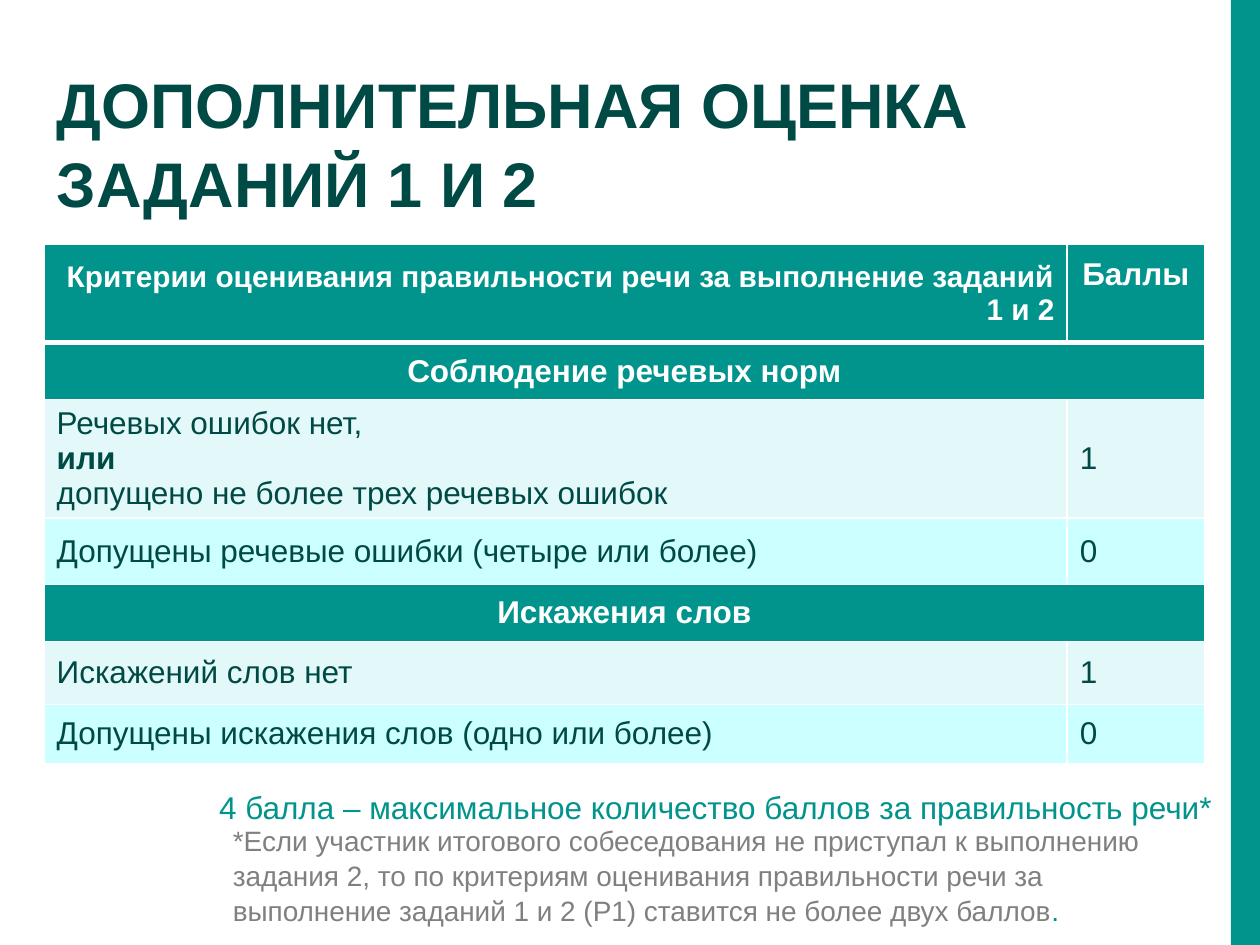
from dataclasses import dataclass

from pptx import Presentation, util as u
from pptx.dml.color import RGBColor
from pptx.enum import shapes, text
from pptx.oxml import parse_xml
from pptx.oxml.ns import nsdecls

LEFT, CENTER, RIGHT = (text.PP_ALIGN.LEFT, text.PP_ALIGN.CENTER,
                       text.PP_ALIGN.RIGHT)


@dataclass(frozen=True)
class Theme:
    font: str = "Arial"
    teal: str = "00948C"
    dark: str = "004A46"
    gray: str = "808080"
    white: str = "FFFFFF"
    pale: str = "E3F8F9"
    aqua: str = "CCFFFF"
    title_size: int = 36
    body_size: int = 18
    header_size: int = 17
    note_size: int = 16
    spacing: float = 1.05


class SlideBuilder:
    def __init__(self, slide, theme):
        self.slide = slide
        self.theme = theme

    def add_runs(self, paragraph, runs, size, align=LEFT):
        """Add runs given as (wording, colour, bold)."""
        paragraph.alignment = align
        for wording, color, bold in runs:
            run = paragraph.add_run()
            run.text = wording
            run.font.name = self.theme.font
            run.font.size = u.Pt(size)
            run.font.bold = bold
            run.font.color.rgb = RGBColor.from_string(color)

    def bar(self, *box):
        bar = self.slide.shapes.add_shape(
            shapes.MSO_SHAPE.RECTANGLE, *map(u.Inches, box))
        bar.shadow.inherit = False
        bar.fill.solid()
        bar.fill.fore_color.rgb = RGBColor.from_string(self.theme.teal)
        bar.line.fill.background()

    def fill_frame(self, holder, runs, size, align=LEFT, top=0.05):
        frame = holder.text_frame
        frame.word_wrap = True
        frame.auto_size = text.MSO_AUTO_SIZE.NONE
        frame.vertical_anchor = text.MSO_ANCHOR.TOP
        frame.margin_top = u.Inches(top)
        frame.paragraphs[0].line_spacing = self.theme.spacing
        self.add_runs(frame.paragraphs[0], runs, size, align)

    def title(self, box, wording):
        title = self.slide.shapes.title
        title.left, title.top, title.width, title.height = map(u.Inches, box)
        self.fill_frame(title, [(wording, self.theme.dark, True)],
                        self.theme.title_size)

    def note(self, box, runs, size, **options):
        note = self.slide.shapes.add_textbox(*map(u.Inches, box))
        self.fill_frame(note, runs, size, **options)

    def table(self, left, top, widths, heights):
        table = self.slide.shapes.add_table(
            len(heights), len(widths),
            *map(u.Inches, (left, top, sum(widths), sum(heights)))).table
        for column, width in zip(table.columns, widths):
            column.width = u.Inches(width)
        for row, height in zip(table.rows, heights):
            row.height = u.Inches(height)
        return table

    def cell(self, cell, lines, fill, size=None, align=LEFT, bottom=1):
        """Fill a cell; each line is (wording, colour, bold)."""
        cell.fill.solid()
        cell.fill.fore_color.rgb = RGBColor.from_string(fill)
        cell.vertical_anchor = text.MSO_ANCHOR.MIDDLE
        self.borders(cell, bottom)
        frame = cell.text_frame
        for i, line in enumerate(lines):
            paragraph = frame.add_paragraph() if i else frame.paragraphs[0]
            self.add_runs(paragraph, [line], size or self.theme.body_size,
                          align)

    def borders(self, cell, bottom):
        properties = cell._tc.get_or_add_tcPr()
        for i, (side, width) in enumerate(
                (("L", 1), ("R", 1), ("T", 1), ("B", bottom))):
            properties.insert(i, parse_xml(
                f'<a:ln{side} {nsdecls("a")} w="{u.Pt(width)}"><a:solidFill>'
                f'<a:srgbClr val="{self.theme.white}"/></a:solidFill>'
                f'</a:ln{side}>'))


def criteria_table(build):
    theme = build.theme
    criteria = build.table(0.35, 1.94, (8.12, 1.09),
                           (0.78, 0.45, 0.94, 0.53, 0.45, 0.5, 0.47))

    # Header row
    heading = "Критерии оценивания правильности речи за выполнение заданий 1 и 2"
    build.cell(criteria.cell(0, 0), [(heading, theme.white, True)], theme.teal,
               theme.header_size, RIGHT, bottom=3)
    points_head = criteria.cell(0, 1)
    build.cell(points_head, [("Баллы", theme.white, True)], theme.teal,
               align=CENTER, bottom=3)
    points_head.vertical_anchor = text.MSO_ANCHOR.TOP
    points_head.margin_top = u.Inches(0.1)

    # Sections: a merged heading, then one row for each score
    sections = [
        ("Соблюдение речевых норм", [
            (["Речевых ошибок нет,", "или",
              "допущено не более трех речевых ошибок"], "1"),
            (["Допущены речевые ошибки (четыре или более)"], "0")]),
        ("Искажения слов", [
            (["Искажений слов нет"], "1"),
            (["Допущены искажения слов (одно или более)"], "0")]),
    ]
    row = 1
    for section, scores in sections:
        criteria.cell(row, 0).merge(criteria.cell(row, 1))
        build.cell(criteria.cell(row, 0), [(section, theme.white, True)],
                   theme.teal, align=CENTER)
        row += 1
        for (lines, points), fill in zip(scores, (theme.pale, theme.aqua)):
            build.cell(criteria.cell(row, 0),
                       [(line, theme.dark, line == "или") for line in lines],
                       fill)
            build.cell(criteria.cell(row, 1), [(points, theme.dark, False)],
                       fill)
            row += 1


def main():
    deck = Presentation()
    deck.slide_width, deck.slide_height = u.Inches(10), u.Inches(7.5)
    theme = Theme()
    build = SlideBuilder(deck.slides.add_slide(deck.slide_layouts[5]), theme)

    # Side bar, title and criteria
    build.bar(9.77, 0, 0.23, 7.5)
    build.title((0.35, 0.44, 8.82, 1.31), "ДОПОЛНИТЕЛЬНАЯ ОЦЕНКА ЗАДАНИЙ 1 И 2")
    criteria_table(build)

    # Maximum score and its footnote
    build.note((0, 6.07, 9.72, 0.81),
               [("4 балла – максимальное количество баллов за правильность "
                 "речи*", theme.teal, False)],
               theme.body_size, align=RIGHT, top=0.17)
    build.note((1.75, 6.47, 7.53, 0.91),
               [("*Если участник итогового собеседования не приступал к "
                 "выполнению задания 2, то по критериям оценивания "
                 "правильности речи за выполнение заданий 1 и 2 (P1) "
                 "ставится не более двух баллов", theme.gray, False),
                (".", theme.teal, False)],
               theme.note_size)

    deck.save("out.pptx")


if __name__ == "__main__":
    main()
